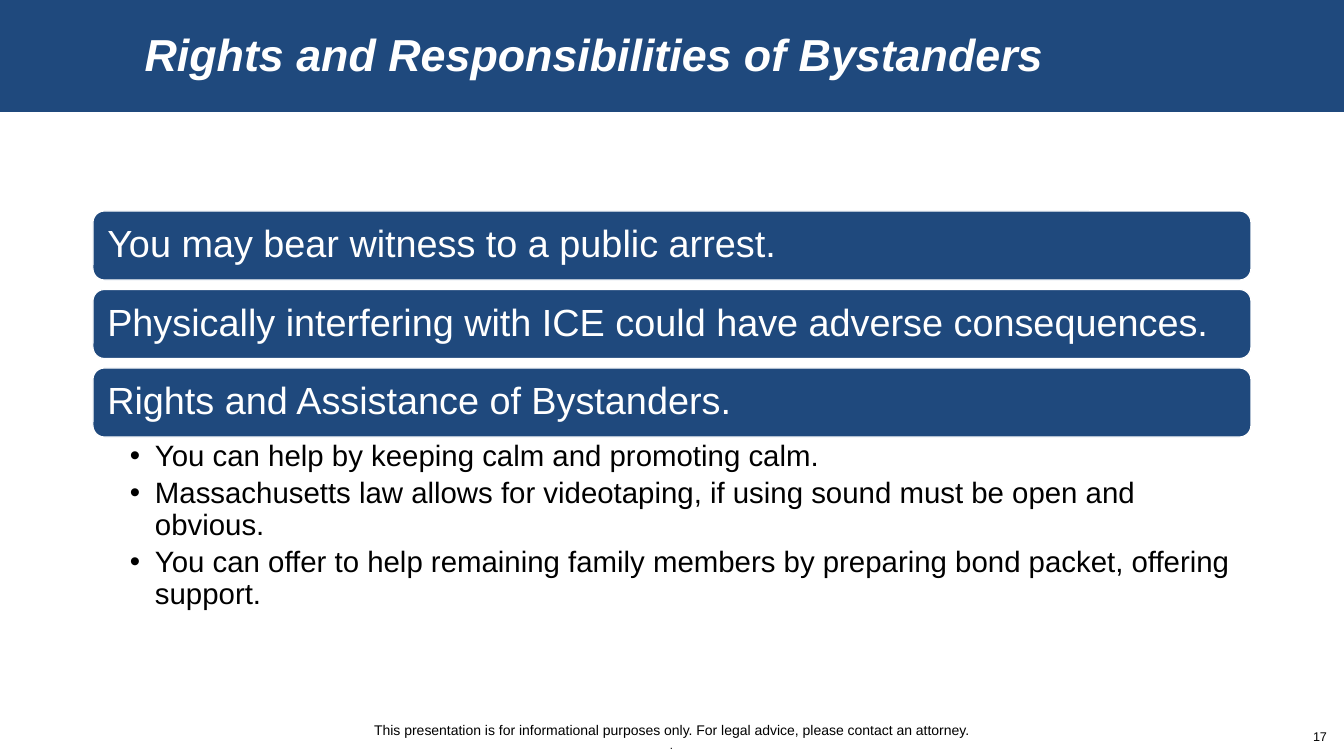
from lxml import etree
from pptx import Presentation
from pptx.dml.color import RGBColor
from pptx.enum.shapes import MSO_SHAPE
from pptx.enum.text import MSO_ANCHOR, PP_ALIGN
from pptx.oxml.ns import qn
from pptx.util import Pt

PX = 914400 / 100.8
RECTANGLE = MSO_SHAPE.RECTANGLE
ROUNDED = MSO_SHAPE.ROUNDED_RECTANGLE
TOP, MIDDLE, BOTTOM = MSO_ANCHOR.TOP, MSO_ANCHOR.MIDDLE, MSO_ANCHOR.BOTTOM
LEFT, CENTER, RIGHT = PP_ALIGN.LEFT, PP_ALIGN.CENTER, PP_ALIGN.RIGHT
NAVY, WHITE, BLACK = "1F497D", "FFFFFF", "000000"
FONT = "Arial"

STATEMENTS = [
    "You may bear witness to a public arrest.",
    "Physically interfering with ICE could have adverse consequences.",
    "Rights and Assistance of Bystanders.",
]
WAYS_TO_HELP = [
    "You can help by keeping calm and promoting calm.",
    "Massachusetts law allows for videotaping, if using sound must be open and obvious.",
    "You can offer to help remaining family members by preparing bond packet, offering support.",
]
DISCLAIMER = "This presentation is for informational purposes only. For legal advice, please contact an attorney."


def px(length):
    return round(length * PX)


def color(hex_string):
    return RGBColor.from_string(hex_string)


def add_panel(page, kind, box, line_color, line_width):
    panel = page.shapes.add_shape(kind, *map(px, box))
    panel.shadow.inherit = False
    panel.fill.solid()
    panel.fill.fore_color.rgb = color(NAVY)
    panel.line.color.rgb = color(line_color)
    panel.line.width = Pt(line_width)
    return panel


def set_frame(shape, margins, anchor):
    frame = shape.text_frame
    frame.word_wrap = True
    frame.vertical_anchor = anchor
    frame.margin_left, frame.margin_top, frame.margin_right, frame.margin_bottom = map(px, margins)
    return frame


def add_text(page, box, margins=(0, 0, 0, 0), anchor=TOP):
    return set_frame(page.shapes.add_textbox(*map(px, box)), margins, anchor)


def write(para, text, size, ink, align=LEFT, bold=False, italic=False):
    para.alignment = align
    span = para.add_run()
    span.text = text
    span.font.name = FONT
    span.font.size = Pt(size)
    span.font.bold = bold
    span.font.italic = italic
    span.font.color.rgb = color(ink)


def set_bullet(para, indent):
    properties = para._p.get_or_add_pPr()
    properties.set("marL", str(px(indent)))
    properties.set("indent", str(-px(indent)))
    etree.SubElement(properties, qn("a:buFont")).set("typeface", FONT)
    etree.SubElement(properties, qn("a:buChar")).set("char", "•")


def add_header(page, box):
    left, top, width, height = box
    add_panel(page, RECTANGLE, box, NAVY, 2)
    title = add_text(page, (left + 15, top + 18, 1159, 72), anchor=MIDDLE)
    write(title.paragraphs[0], "Rights and Responsibilities of Bystanders", 32, WHITE, CENTER, True, True)


def add_statements(page, box):
    left, top, width, height = box
    bar_height = 69
    step = (height - bar_height) / (len(STATEMENTS) - 1)
    for index, statement in enumerate(STATEMENTS):
        bar = add_panel(page, ROUNDED, (left, top + index * step, width, bar_height), WHITE, 0.85)
        para = set_frame(bar, (11, 11, 11, 11), MIDDLE).paragraphs[0]
        para.line_spacing = 0.9
        write(para, statement, 27, WHITE)


def add_ways_to_help(page, box):
    frame = add_text(page, box, (37, 4, 21, 4))
    for index, way in enumerate(WAYS_TO_HELP):
        para = frame.add_paragraph() if index else frame.paragraphs[0]
        set_bullet(para, 25)
        para.line_spacing = 0.9
        para.space_after = Pt(4)
        write(para, way, 21, BLACK)


def add_footer(page, box):
    left, top, width, height = box
    notice = add_text(page, (left + 273, top, 797, 40), (10, 5, 10, 5))
    write(notice.paragraphs[0], DISCLAIMER, 10, BLACK, CENTER)
    write(notice.add_paragraph(), ".", 8, BLACK, CENTER)
    number = add_text(page, (left + width - 53, top + 12, 36, 15), anchor=BOTTOM)
    write(number.paragraphs[0], "17", 9, BLACK, RIGHT)


def main():
    deck = Presentation()
    deck.slide_width, deck.slide_height = px(1344), px(756)
    page = deck.slides.add_slide(deck.slide_layouts[6])
    add_header(page, (0, 0, 1344, 111))
    add_footer(page, (0, 717, 1344, 39))
    add_statements(page, (93, 211, 1158, 226))
    add_ways_to_help(page, (93, 437, 1158, 175))
    deck.save("out.pptx")


if __name__ == "__main__":
    main()
